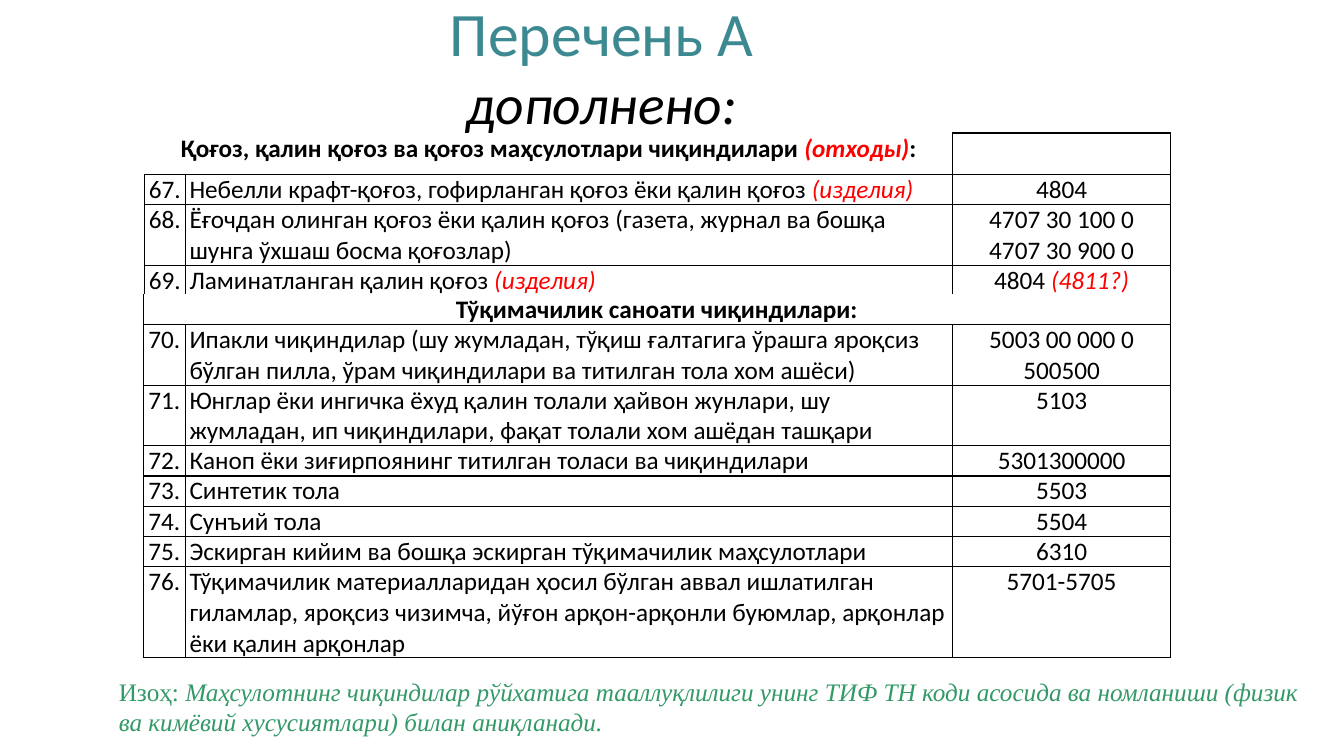
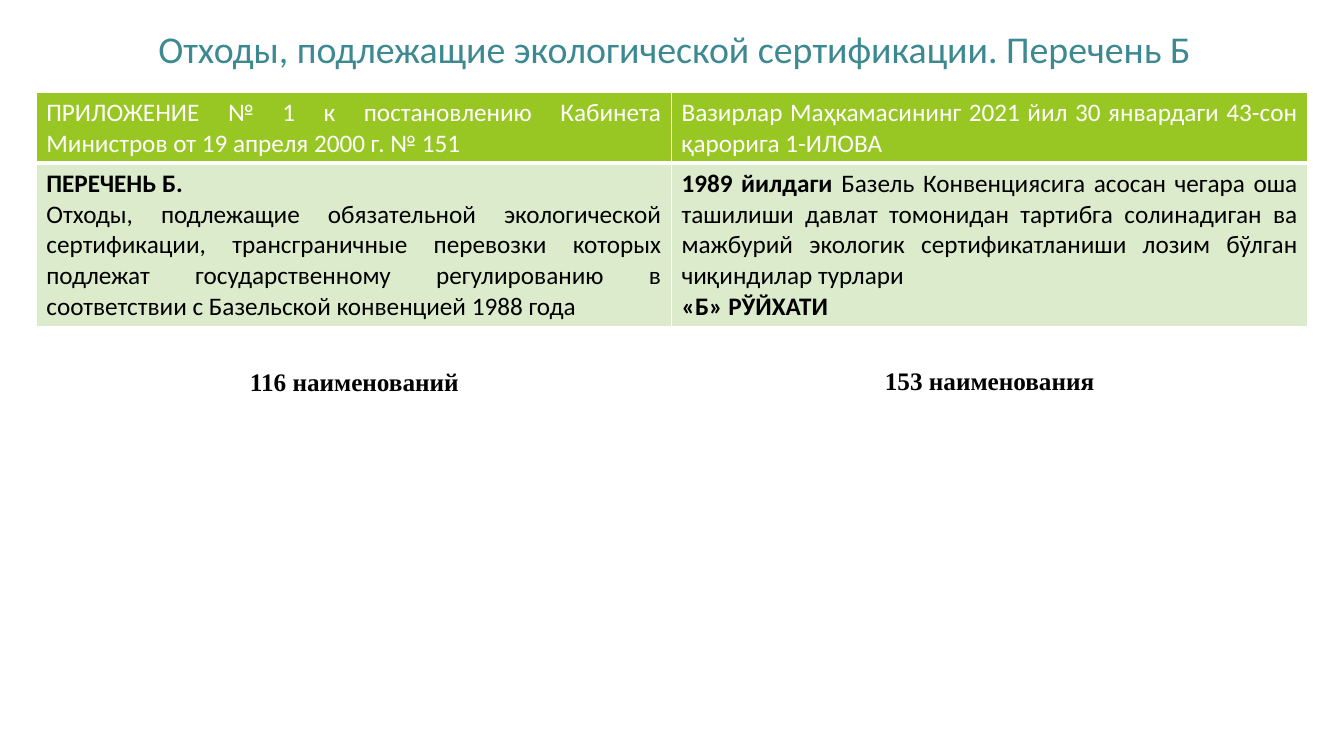
from lxml.etree import SubElement
from pptx import Presentation
from pptx.dml.color import RGBColor
from pptx.enum.text import MSO_ANCHOR, PP_ALIGN
from pptx.oxml.ns import qn
from pptx.util import Inches, Pt

TEAL = RGBColor(0x3D, 0x89, 0x91)
GREEN = RGBColor(0x33, 0x99, 0x66)
LIME = RGBColor(0x98, 0xC7, 0x23)
PALE = RGBColor(0xDD, 0xEB, 0xCD)
RED = RGBColor(0xFF, 0, 0)
BLACK = RGBColor(0, 0, 0)
WHITE = RGBColor(0xFF, 0xFF, 0xFF)
SANS, SERIF = "Calibri", "Times New Roman"
LEFT, MID, JUST = PP_ALIGN.LEFT, PP_ALIGN.CENTER, PP_ALIGN.JUSTIFY
LINE = 0.3  # height of one table text line

# A block is a list of paragraphs; a paragraph is a string or a list of
# (text, flags) runs, where b = bold, i = italic, r = red.
PAPER_HEAD = [[("Қоғоз, қалин қоғоз ва қоғоз маҳсулотлари чиқиндилари ", "b"),
               ("(отходы)", "bir"), (":", "b")]]
PAPER = [  # number, name, codes, lines
    ("67.", [[("Небелли крафт-қоғоз, гофирланган қоғоз ёки қалин қоғоз ", ""),
              ("(изделия)", "ir")]], ["4804"], 1),
    ("68.", ["Ёғочдан олинган қоғоз ёки қалин қоғоз (газета, журнал ва бошқа "
             "шунга ўхшаш босма қоғозлар)"],
     ["4707 30 100 0", "4707 30 900 0"], 2),
    ("69.", [[("Ламинатланган қалин қоғоз ", ""), ("(изделия)", "ir")]],
     [[("4804 ", ""), ("(4811?)", "ir")]], 1),
]
CLOTH_HEAD = [[("Тўқимачилик саноати чиқиндилари:", "b")]]
CLOTH = [
    ("70.", ["Ипакли чиқиндилар (шу жумладан, тўқиш ғалтагига ўрашга яроқсиз "
             "бўлган пилла, ўрам чиқиндилари ва титилган тола хом ашёси)"],
     ["5003 00 000 0", "500500"], 2),
    ("71.", ["Юнглар ёки ингичка ёхуд қалин толали ҳайвон жунлари, шу "
             "жумладан, ип чиқиндилари, фақат толали хом ашёдан ташқари"],
     ["5103"], 2),
    ("72.", ["Каноп ёки зиғирпоянинг титилган толаси ва чиқиндилари"],
     ["5301300000"], 1),
    ("73.", ["Синтетик тола"], ["5503"], 1),
    ("74.", ["Сунъий тола"], ["5504"], 1),
    ("75.", ["Эскирган кийим ва бошқа эскирган тўқимачилик маҳсулотлари"],
     ["6310"], 1),
    ("76.", ["Тўқимачилик материалларидан ҳосил бўлган аввал ишлатилган "
             "гиламлар, яроқсиз чизимча, йўғон арқон-арқонли буюмлар, "
             "арқонлар ёки қалин арқонлар"], ["5701-5705"], 3),
]
NOTE = [[("Изоҳ: ", ""),
         ("Маҳсулотнинг чиқиндилар рўйхатига тааллуқлилиги унинг ТИФ ТН коди "
          "асосида ва номланиши (физик ва кимёвий хусусиятлари) билан "
          "аниқланади.", "i")]]

ACTS = [["ПРИЛОЖЕНИЕ № 1 к постановлению Кабинета Министров от 19 апреля "
         "2000 г. № 151"],
        ["Вазирлар Маҳкамасининг 2021 йил 30 январдаги 43-сон қарорига "
         "1-ИЛОВА"]]
LISTS = [[[("ПЕРЕЧЕНЬ Б.", "b")],
          "Отходы, подлежащие обязательной экологической сертификации, "
          "трансграничные перевозки которых подлежат государственному "
          "регулированию в соответствии с Базельской конвенцией 1988 года"],
         [[("1989 йилдаги ", "b"),
           ("Базель Конвенциясига асосан чегара оша ташилиши давлат томонидан "
            "тартибга солинадиган ва мажбурий экологик сертификатланиши лозим "
            "бўлган чиқиндилар турлари", "")],
          [("«Б» РЎЙХАТИ", "b")]]]
COUNTS = [[[("116 наименований", "b")]], [[("153 наименования", "b")]]]


def write(frame, block, color=BLACK, size=18, face=SANS, align=LEFT):
    for k, para in enumerate(block):
        p = frame.add_paragraph() if k else frame.paragraphs[0]
        p.alignment = align
        for text, flags in [(para, "")] if isinstance(para, str) else para:
            run = p.add_run()
            run.text = text
            font = run.font
            font.name, font.size = face, Pt(size)
            font.bold, font.italic = "b" in flags, "i" in flags
            font.color.rgb = RED if "r" in flags else color


def add_text(slide, box, block, **style):
    frame = slide.shapes.add_textbox(*map(Inches, box)).text_frame
    frame.word_wrap = True
    write(frame, block, **style)
    return frame


def add_title(slide, box, text, size):
    frame = add_text(slide, box, [text], color=TEAL, size=size, align=MID)
    frame.vertical_anchor = MSO_ANCHOR.MIDDLE
    return frame


def edge(cell, color, sides="LRTB", thick=""):
    """Draw the named sides of a cell, 3 pt where thick, and clear the rest."""
    props = cell._tc.get_or_add_tcPr()
    for side in "LRTB":
        width = Pt(3 if side in thick else 1)
        line = SubElement(props, qn("a:ln" + side), w=str(width))
        if side in sides:
            fill = SubElement(line, qn("a:solidFill"))
            SubElement(fill, qn("a:srgbClr"), val=str(color))
        else:
            SubElement(line, qn("a:noFill"))


def pad(cell, left=0.04, top=0, right=0.04, bottom=0):
    cell.margin_left, cell.margin_right = Inches(left), Inches(right)
    cell.margin_top, cell.margin_bottom = Inches(top), Inches(bottom)


def add_grid(slide, left, top, cols, rows):
    grid = slide.shapes.add_table(
        len(rows), len(cols), *map(Inches, (left, top, sum(cols), sum(rows)))
    ).table
    grid.first_row = grid.horz_banding = False
    for col, width in zip(grid.columns, cols):
        col.width = Inches(width)
    for row, height in zip(grid.rows, rows):
        row.height = Inches(height)
    return grid


def add_codes(slide, left, top, cols, head, high, span, sides, items):
    """Table of wastes under a heading that spans the first columns."""
    rows = [high] + [item[3] * LINE for item in items]
    grid = add_grid(slide, left, top, cols, rows)
    for r in range(len(rows)):
        for c in range(len(cols)):
            cell = grid.cell(r, c)
            title = r == 0 and c < span
            edge(cell, BLACK, sides if title else "LRTB")
            cell.fill.solid()
            cell.fill.fore_color.rgb = WHITE
            if r or title:
                pad(cell)
    grid.cell(0, 0).merge(grid.cell(0, span - 1))
    write(grid.cell(0, 0).text_frame, head, align=MID)
    for r, (num, name, codes, _) in enumerate(items, 1):
        for c, block in enumerate(([num], name, codes)):
            write(grid.cell(r, c).text_frame, block,
                  align=LEFT if c == 1 else MID)


def list_a(slide):
    frame = add_title(slide, (1.54, 0.13, 8.86, 1.04), "Перечень А", 44.1)
    extra = frame.add_paragraph()
    extra.text = "дополнено:"
    extra.alignment = MID
    font = extra.runs[0].font
    font.name, font.size, font.italic = SANS, Pt(39.6), True
    font.color.rgb = BLACK
    add_codes(slide, 1.43, 1.32, (0.41, 7.61, 2.16), PAPER_HEAD, 0.41, 2,
              "RB", PAPER)
    add_codes(slide, 1.42, 2.92, (0.42, 7.61, 2.16), CLOTH_HEAD, LINE, 3,
              "LRB", CLOTH)
    add_text(slide, (1.08, 6.66, 11.98, 0.71), NOTE, color=GREEN, face=SERIF)


def list_b(slide):
    add_title(slide, (0.27, 0.13, 12.84, 0.69),
              "Отходы, подлежащие экологической сертификации. Перечень Б", 27)
    rows = (0.7, 1.62, 0.41, 0.86, 0.4)
    grid = add_grid(slide, 0.36, 0.92, (6.3, 6.31), rows)
    looks = {0: (ACTS, LIME, WHITE, SANS, JUST),
             1: (LISTS, PALE, BLACK, SANS, JUST),
             3: (COUNTS, None, BLACK, SERIF, MID)}
    for r in range(len(rows)):
        for c in range(2):
            cell = grid.cell(r, c)
            edge(cell, WHITE, thick={0: "B", 1: "T"}.get(r, ""))
            blocks, fill, color, face, align = looks.get(r, [None] * 5)
            if fill is None:
                cell.fill.background()
            else:
                cell.fill.solid()
                cell.fill.fore_color.rgb = fill
            if blocks:
                write(cell.text_frame, blocks[c], color, 18, face, align)
        if r not in looks:
            grid.cell(r, 0).merge(grid.cell(r, 1))
    pad(grid.cell(3, 0), 0.02, 0.01, 0.01, 0.01)
    pad(grid.cell(3, 1))


def main():
    deck = Presentation()
    deck.slide_width, deck.slide_height = Inches(13.33), Inches(7.5)
    for build in (list_a, list_b):
        build(deck.slides.add_slide(deck.slide_layouts[6]))
    deck.save("out.pptx")


if __name__ == "__main__":
    main()
